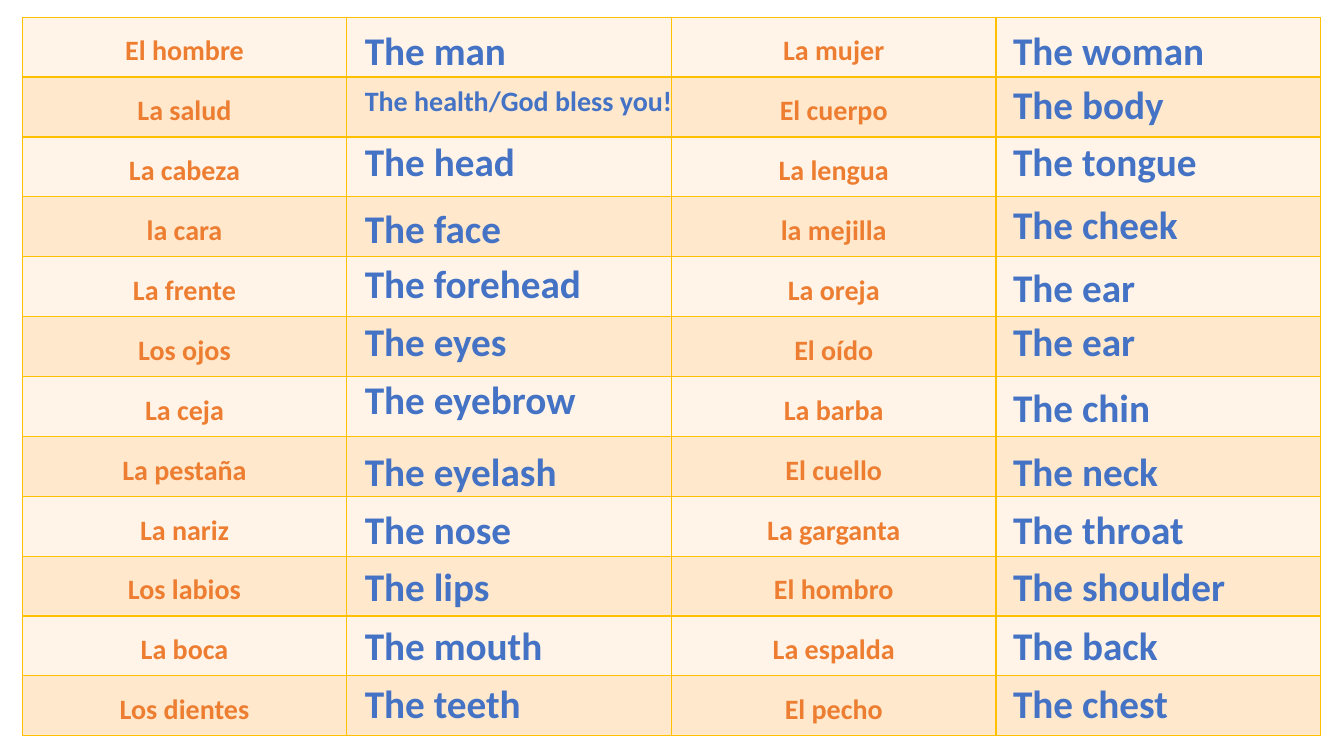
"""Build a Spanish-English vocabulary slide about people and the body."""
from lxml import etree
from pptx import Presentation
from pptx.dml.color import RGBColor
from pptx.enum.text import MSO_ANCHOR, MSO_AUTO_SIZE, PP_ALIGN
from pptx.oxml.ns import qn
from pptx.util import Inches, Pt

CENTER = PP_ALIGN.CENTER
LEFT = PP_ALIGN.LEFT
TOP = MSO_ANCHOR.TOP
FIT_SHAPE = MSO_AUTO_SIZE.SHAPE_TO_FIT_TEXT

SLIDE_WIDTH, SLIDE_HEIGHT = 13.33, 7.5
TABLE_LEFT, TABLE_TOP = 0.22, 0.17
TABLE_WIDTH, TABLE_HEIGHT = 12.88, 7.13
COLUMNS = 4
BAND_FILLS = ("FFF4E7", "FFE8CC")
BORDER_COLOR = "FFC000"
SPANISH = {"size": Pt(20), "name": "Calibri", "bold": True}
ENGLISH = {"size": Pt(28), "name": "Calibri", "bold": True}
ENGLISH_SMALL = {**ENGLISH, "size": Pt(20)}
SPANISH_COLOR, ENGLISH_COLOR = "ED7D31", "4472C4"
CELL_MARGINS = {"margin_left": Inches(0.07), "margin_right": Inches(0.07),
                "margin_top": 0, "margin_bottom": 0, "vertical_anchor": TOP}
TABLE_FLAGS = {"first_row": False, "horz_banding": False}
LONG_PHRASE = "The health/God bless you!"

# Each entry: Spanish, English, vertical nudge of the English from its row top.
LEFT_WORDS = [
    ("El hombre", "The man", 0.04),
    ("La salud", LONG_PHRASE, 0.02),
    ("La cabeza", "The head", -0.05),
    ("la cara", "The face", 0.03),
    ("La frente", "The forehead", -0.02),
    ("Los ojos", "The eyes", -0.04),
    ("La ceja", "The eyebrow", -0.06),
    ("La pestaña", "The eyelash", 0.06),
    ("La nariz", "The nose", 0.04),
    ("Los labios", "The lips", 0.01),
    ("La boca", "The mouth", 0),
    ("Los dientes", "The teeth", -0.02),
]
RIGHT_WORDS = [
    ("La mujer", "The woman", 0.04),
    ("El cuerpo", "The body", -0.02),
    ("La lengua", "The tongue", -0.05),
    ("la mejilla", "The cheek", -0.01),
    ("La oreja", "The ear", 0.02),
    ("El oído", "The ear", -0.04),
    ("La barba", "The chin", 0.02),
    ("El cuello", "The neck", 0.06),
    ("La garganta", "The throat", 0.04),
    ("El hombro", "The shoulder", 0.01),
    ("La espalda", "The back", 0),
    ("El pecho", "The chest", -0.02),
]
ROWS = len(LEFT_WORDS)
COLUMN_WIDTH = TABLE_WIDTH / COLUMNS
ROW_HEIGHT = TABLE_HEIGHT / ROWS
WORD_LISTS = ((0, 3.52, LEFT_WORDS), (2, 9.95, RIGHT_WORDS))


def set_color(target, color):
    """Give a font or fill color format the hex color."""
    target.rgb = RGBColor.from_string(color)


def apply_format(target, values):
    """Set each attribute named in a dict of format values."""
    for name, value in values.items():
        setattr(target, name, value)


def write_text(text_frame, text, font_values, color, alignment, spacing):
    """Write one formatted paragraph into a text frame."""
    paragraph = text_frame.paragraphs[0]
    apply_format(paragraph, {"alignment": alignment, "line_spacing": spacing})
    run = paragraph.add_run()
    run.text = text
    apply_format(run.font, font_values)
    set_color(run.font.color, color)


def add_borders(cell):
    """Draw a one-point border on every side of a cell."""
    properties = cell._tc.get_or_add_tcPr()
    for index, side in enumerate(("a:lnL", "a:lnR", "a:lnT", "a:lnB")):
        line = etree.Element(qn(side), w=str(Pt(1)))
        fill = etree.SubElement(line, qn("a:solidFill"))
        etree.SubElement(fill, qn("a:srgbClr"), val=BORDER_COLOR)
        properties.insert(index, line)


def add_word_table(slide):
    """Add the banded grid with the Spanish words."""
    frame = slide.shapes.add_table(
        ROWS, COLUMNS, Inches(TABLE_LEFT), Inches(TABLE_TOP),
        Inches(TABLE_WIDTH), Inches(TABLE_HEIGHT))
    table = frame.table
    apply_format(table, TABLE_FLAGS)
    for row in range(ROWS):
        for column in range(COLUMNS):
            cell = table.cell(row, column)
            apply_format(cell, CELL_MARGINS)
            cell.fill.solid()
            set_color(cell.fill.fore_color, BAND_FILLS[row % 2])
            add_borders(cell)
    for column, _, words in WORD_LISTS:
        for row, (spanish, _, _) in enumerate(words):
            write_text(table.cell(row, column).text_frame, spanish,
                       SPANISH, SPANISH_COLOR, CENTER, 1.5)


def add_translation(slide, text, left, top):
    """Add a text box with one English translation."""
    is_long = text == LONG_PHRASE
    width, height = (3.53, 0.44) if is_long else (3.24, 0.57)
    box = slide.shapes.add_textbox(
        Inches(left), Inches(top), Inches(width), Inches(height))
    apply_format(box.text_frame, {"word_wrap": True, "auto_size": FIT_SHAPE})
    write_text(box.text_frame, text, ENGLISH_SMALL if is_long else ENGLISH,
               ENGLISH_COLOR, LEFT, 1.0)


def main():
    """Build the slide and save it."""
    presentation = Presentation()
    presentation.slide_width = Inches(SLIDE_WIDTH)
    presentation.slide_height = Inches(SLIDE_HEIGHT)
    slide = presentation.slides.add_slide(presentation.slide_layouts[6])
    add_word_table(slide)
    for _, left, words in WORD_LISTS:
        for row, (_, english, nudge) in enumerate(words):
            add_translation(slide, english, left,
                            TABLE_TOP + row * ROW_HEIGHT + nudge)
    presentation.save("out.pptx")


if __name__ == "__main__":
    main()
